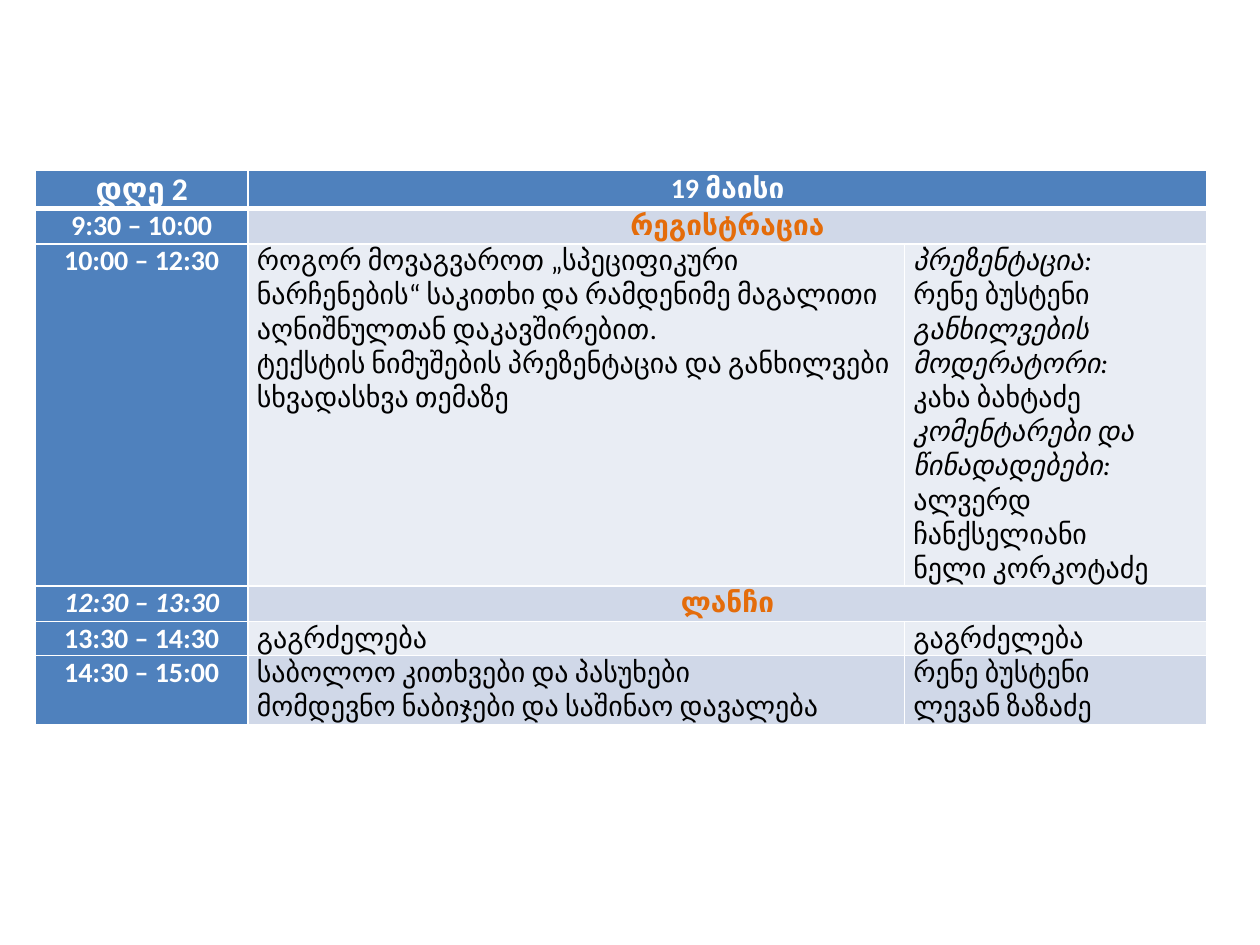
"""Build the agenda table slide for the second day."""
import pptx
import pptx.dml.color
import pptx.enum.text
import pptx.oxml
import pptx.oxml.ns
import pptx.util
from pptx.util import Inches

RGBColor = pptx.dml.color.RGBColor
WHITE = RGBColor(0xFF, 0xFF, 0xFF)
BLACK = RGBColor(0, 0, 0)
BLUE = RGBColor(0x4F, 0x81, 0xBD)
ORANGE = RGBColor(0xE4, 0x6C, 0x0A)
MID = RGBColor(0xD0, 0xD8, 0xE8)
PALE = RGBColor(0xE9, 0xED, 0xF4)
ALIGN = pptx.enum.text.PP_ALIGN
ANCHOR = pptx.enum.text.MSO_ANCHOR

COLUMN_WIDTHS = [1.69, 5.21, 2.4]
AGENDA = [
    (0.29, BLUE, ["დღე 2"], ["19 მაისი"], None),
    (0.28, MID, ["9:30 – 10:00"], ["რეგისტრაცია"], None),
    (1.9, PALE, ["10:00 – 12:30"],
     ["როგორ მოვაგვაროთ „სპეციფიკური ნარჩენების“ საკითხი და რამდენიმე "
      "მაგალითი აღნიშნულთან დაკავშირებით.",
      "ტექსტის ნიმუშების პრეზენტაცია და განხილვები სხვადასხვა თემაზე"],
     ["პრეზენტაცია:", "რენე ბუსტენი", "განხილვების მოდერატორი:",
      "კახა ბახტაძე", "კომენტარები და წინადადებები:",
      "ალვერდ ჩანქსელიანი\nნელი კორკოტაძე"]),
    (0.28, MID, ["12:30 – 13:30"], ["ლანჩი"], None),
    (0.24, PALE, ["13:30 – 14:30"], ["გაგრძელება"], ["გაგრძელება"]),
    (0.51, MID, ["14:30 – 15:00"],
     ["საბოლოო კითხვები და პასუხები", "მომდევნო ნაბიჯები და საშინაო დავალება"],
     ["რენე ბუსტენი\nლევან ზაზაძე"]),
]
LUNCH_ROW = 3


def style_cell(cell, fill, top, bottom):
    properties = cell._tc.get_or_add_tcPr()
    for side, points in (("L", 1), ("R", 1), ("T", top), ("B", bottom)):
        properties.append(pptx.oxml.parse_xml(
            f'<a:ln{side} {pptx.oxml.ns.nsdecls("a")} w="{pptx.util.Pt(points)}">'
            f'<a:solidFill><a:srgbClr val="{WHITE}"/></a:solidFill></a:ln{side}>'))
    cell.fill.solid()
    cell.fill.fore_color.rgb = fill
    cell.margin_left = cell.margin_right = Inches(0.07)
    cell.margin_top = cell.margin_bottom = 0


def write_cell(cell, texts, size, color, bold, centered, italic):
    for index, text in enumerate(texts):
        frame = cell.text_frame
        para = frame.add_paragraph() if index else frame.paragraphs[0]
        para.alignment = ALIGN.CENTER if centered else ALIGN.LEFT
        for number, line in enumerate(text.split("\n")):
            if number:
                para.add_line_break()
            span = para.add_run()
            span.text = line
            span.font.name = "Calibri"
            span.font.size = pptx.util.Pt(size)
            span.font.color.rgb = color
            span.font.bold = bold
            span.font.italic = italic or line.endswith(":")


deck = pptx.Presentation()
deck.slide_width, deck.slide_height = Inches(10), Inches(7.5)
page = deck.slides.add_slide(deck.slide_layouts[6])

table = page.shapes.add_table(
    len(AGENDA), len(COLUMN_WIDTHS), Inches(0.28), Inches(1.35),
    Inches(sum(COLUMN_WIDTHS)), Inches(sum(entry[0] for entry in AGENDA))).table
for column, width in zip(table.columns, COLUMN_WIDTHS):
    column.width = Inches(width)

for row, (height, fill, *contents) in enumerate(AGENDA):
    table.rows[row].height = Inches(height)
    merged = contents[2] is None
    for column, texts in enumerate(contents):
        cell = table.cell(row, column)
        label = row == 0 or column == 0
        style_cell(cell, BLUE if label else fill,
                   3 if row == 1 else 1, 3 if row == 0 else 1)
        if row == 0:
            cell.vertical_anchor = ANCHOR.MIDDLE
        if texts:
            color = WHITE if label else ORANGE if merged else BLACK
            write_cell(cell, texts, 18 if row == column == 0 else 16, color,
                       label or merged, label or merged,
                       row == LUNCH_ROW and column == 0)
    if merged:
        table.cell(row, 1).merge(table.cell(row, 2))

deck.save("out.pptx")
